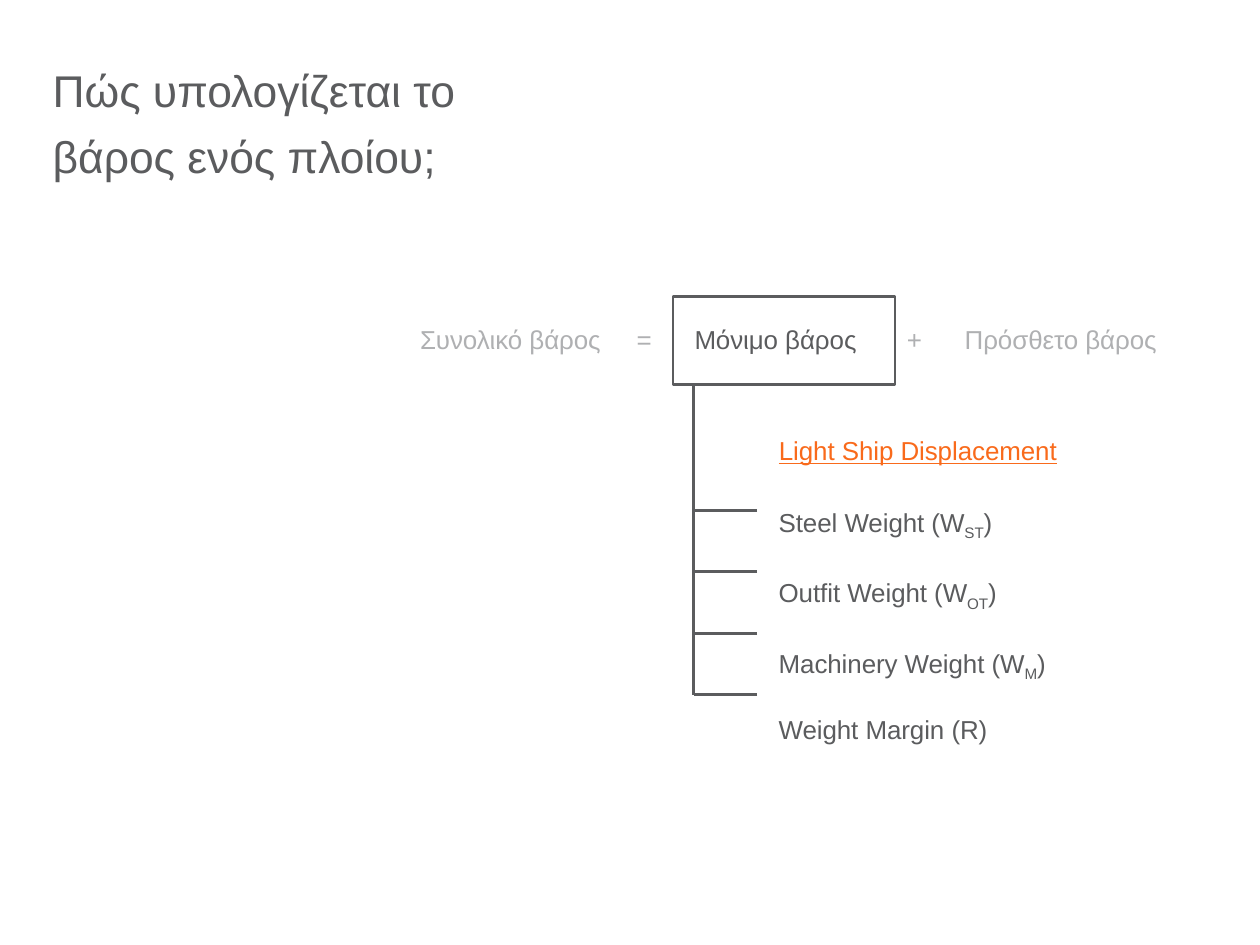
from lxml.etree import SubElement
from pptx import Presentation
from pptx.dml.color import RGBColor
from pptx.enum.shapes import MSO_CONNECTOR, MSO_SHAPE
from pptx.enum.text import MSO_ANCHOR
from pptx.oxml.ns import qn
from pptx.util import Emu, Pt

WIDTH, HEIGHT = Emu(4321175), Emu(3240088)
COLORS = {"dark": "5B5C5E", "pale": "AFB0B2", "accent": "F96A1B"}
FONT = "Arial"
BODY_LEFT, LIST_LEFT = 33.35, 61.81
TRUNK_X, TWIG_END = 55.06, 60.1
TRUNK_TOP, TWIG_TOP, TWIG_STEP = 40.7, 54, 6.5

FORMULA = [("Συνολικό βάρος", "pale"), ("\t=", "pale"), ("\tΜόνιμο βάρος", "dark"),
           ("\t+", "pale"), ("\tΠρόσθετο βάρος", "pale")]
FORMULA_TABS = [50.53, 55.13, 71.97, 76.57]
WEIGHTS = [("Steel Weight (W", "ST", ")"), ("Outfit Weight (W", "OT", ")"),
           ("Machinery Weight (W", "M", ")"), ("Weight Margin (R)",)]


def px(share):
    """Percentage of the slide width as a length."""
    return round(WIDTH * share / 100)


def py(share):
    """Percentage of the slide height as a length."""
    return round(HEIGHT * share / 100)


def rgb(color):
    return RGBColor.from_string(COLORS[color])


def add_run(p, text, color="dark", baseline=0, **font):
    r = p.add_run()
    r.text = text
    r.font.color.rgb = rgb(color)
    for name, value in {"name": FONT, "size": Pt(7), **font}.items():
        setattr(r.font, name, value)
    if baseline:
        r.font._element.set("baseline", str(baseline * 1000))


def add_textbox(s, x, y, w, h, anchor=MSO_ANCHOR.TOP):
    tf = s.shapes.add_textbox(px(x), py(y), px(w), py(h)).text_frame
    margins = {f"margin_{side}": 0 for side in ("left", "top", "right", "bottom")}
    for name, value in {**margins, "word_wrap": True, "vertical_anchor": anchor}.items():
        setattr(tf, name, value)
    return tf


def style_line(shape):
    shape.line.color.rgb = rgb("dark")
    shape.line.width = Pt(0.75)


def add_line(s, x1, y1, x2, y2):
    line = s.shapes.add_connector(MSO_CONNECTOR.STRAIGHT, px(x1), py(y1), px(x2), py(y2))
    style_line(line)
    SubElement(line._element.spPr, qn("a:effectLst"))


def add_title(s):
    p = add_textbox(s, 4.18, 5.65, 91.63, 13.27, MSO_ANCHOR.MIDDLE).paragraphs[0]
    p.line_spacing = 1.25
    add_run(p, "Πώς υπολογίζεται το", size=Pt(12))
    p.add_line_break()
    add_run(p, "βάρος ενός πλοίου;", size=Pt(12))


def add_formula(p):
    p.line_spacing, p.space_before = 1.25, Pt(0.9)
    tabs = SubElement(p._p.get_or_add_pPr(), qn("a:tabLst"))
    for x in FORMULA_TABS:
        SubElement(tabs, qn("a:tab"), pos=str(px(x - BODY_LEFT)), algn="l")
    for text, color in FORMULA:
        add_run(p, text, color)


def add_weights(tf):
    for row, parts in enumerate(WEIGHTS):
        p = tf.add_paragraph()
        p.line_spacing, p.space_before = 2.0, Pt(0 if row else 31.5)
        p._p.get_or_add_pPr().set("marL", str(px(LIST_LEFT - BODY_LEFT)))
        for i, text in enumerate(parts):
            add_run(p, text, baseline=-25 if i == 1 else 0)


def add_frame(s):
    frame = s.shapes.add_shape(MSO_SHAPE.RECTANGLE, px(53.4), py(31.41), px(17.64), py(9.3))
    frame.shadow.inherit = False
    frame.fill.background()
    style_line(frame)


def add_tree(s):
    twigs = [TWIG_TOP + i * TWIG_STEP for i in range(len(WEIGHTS))]
    add_line(s, TRUNK_X, TRUNK_TOP, TRUNK_X, twigs[-1])
    for y in twigs:
        add_line(s, TWIG_END, y, TRUNK_X, y)


def main():
    prs = Presentation()
    prs.slide_width, prs.slide_height = WIDTH, HEIGHT
    s = prs.slides.add_slide(prs.slide_layouts[6])
    add_title(s)
    body = add_textbox(s, BODY_LEFT, 33.41, 62.42, 61.24)
    add_formula(body.paragraphs[0])
    add_weights(body)
    add_frame(s)
    label = add_textbox(s, LIST_LEFT, 46, 27.93, 3.39)
    add_run(label.paragraphs[0], "Light Ship Displacement", "accent", underline=True)
    add_tree(s)
    prs.save("out.pptx")


if __name__ == "__main__":
    main()
